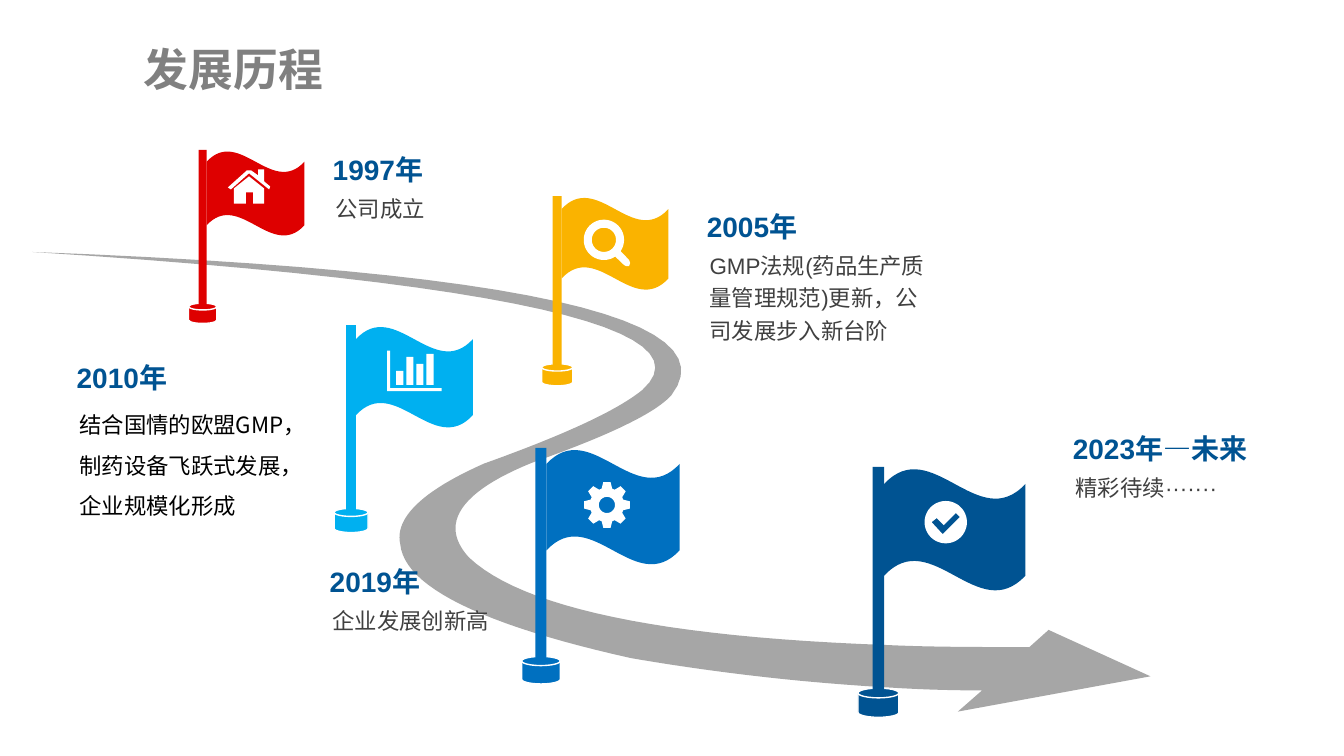
from math import cos, radians, sin

from pptx import Presentation
from pptx import util as u
from pptx.dml.color import RGBColor
from pptx.enum import shapes, text
from pptx.oxml import ns

COLOURS = {
    "red": "DE0000", "amber": "FAB300", "sky": "00B0F0", "blue": "0070C0",
    "navy": "005392", "road": "A6A6A6", "title": "808080", "body": "404040",
    "black": "000000", "white": "FFFFFF",
}
LATIN, CHINESE = "Arial", "Noto Sans CJK SC"

# Road outline, relative to its box: two numbers are a line, six a curve
ROAD = [
    (9.89, 3.92), (10.08, 3.75), (11.09, 4.21), (9.18, 4.56), (9.42, 4.35),
    (9.10, 4.35, 8.79, 4.34, 8.48, 4.32),
    (7.60, 4.27, 6.76, 4.17, 5.94, 4.03),
    (4.46, 3.70, 3.69, 3.32, 3.65, 2.90),
    (3.59, 2.64, 3.87, 2.37, 4.48, 2.10),
    (5.26, 1.82, 5.79, 1.58, 6.05, 1.37),
    (6.73, 0.76, 4.71, 0.30, 0, 0),
    (4.81, 0.18, 6.93, 0.65, 6.34, 1.42),
    (6.18, 1.60, 5.72, 1.82, 4.96, 2.09),
    (4.24, 2.38, 4.03, 2.70, 4.33, 3.03),
    (4.86, 3.53, 6.24, 3.82, 8.48, 3.90),
    (8.92, 3.92, 9.39, 3.92, 9.89, 3.92),
]


def rgb(name):
    return RGBColor.from_string(COLOURS[name])


# Geometry of the outlines
def flatten(segments, steps=24):
    points = [segments[0]]
    for segment in segments[1:]:
        if len(segment) == 2:
            points.append(segment)
            continue
        x0, y0 = points[-1]
        x1, y1, x2, y2, x3, y3 = segment
        for step in range(1, steps + 1):
            t = step / steps
            a, b, c, d = (1 - t) ** 3, 3 * t * (1 - t) ** 2, 3 * t * t * (1 - t), t ** 3
            points.append((a * x0 + b * x1 + c * x2 + d * x3,
                           a * y0 + b * y1 + c * y2 + d * y3))
    return points


def polar(radius, degrees, cx=0, cy=0):
    angle = radians(degrees)
    return cx + radius * cos(angle), cy + radius * sin(angle)


def arc(radius, start=0, end=360, cx=0, cy=0, steps=60):
    return [polar(radius, start + (end - start) * i / steps, cx, cy)
            for i in range(steps + 1)]


# Icons: contours around the icon's centre
def house_icon():
    roof = [(0.2, 0.03), (0, -0.13), (-0.18, 0.03), (-0.21, 0.01), (-0.02, -0.16),
            (0.02, -0.16), (0.09, -0.11), (0.09, -0.17), (0.15, -0.17),
            (0.15, -0.05), (0.21, 0)]
    walls = [(0.15, 0.17), (0.04, 0.17), (0.04, 0.06), (-0.03, 0.06), (-0.03, 0.17),
             (-0.15, 0.17), (-0.15, 0.02), (0, -0.1), (0.15, 0.02)]
    return [roof, walls]


def search_icon():
    centre = {"cx": -0.03, "cy": -0.04}
    handle = [(0.22, 0.16), (0.23, 0.19), (0.22, 0.22), (0.19, 0.22), (0.17, 0.21)]
    return [arc(0.2, 56, 394, **centre) + handle, arc(0.12, **centre)]


def chart_icon():
    axes = [(0.27, 0.2), (-0.27, 0.2), (-0.27, -0.2), (-0.24, -0.2),
            (-0.24, 0.17), (0.27, 0.17)]
    contours = [axes]
    for i, top in enumerate([0, -0.14, -0.07, -0.17]):
        left = -0.18 + 0.1 * i
        right = left + 0.07
        contours.append([(left, 0.14), (left, top), (right, top), (right, 0.14)])
    return contours


def gear_icon():
    teeth = [polar(radius, tooth * 45 + turn) for tooth in range(8)
             for radius, turn in ((0.17, -18), (0.23, -9), (0.23, 9), (0.17, 18))]
    return [teeth, arc(0.08)]


def check_icon():
    tick = [(0.14, -0.05), (0.1, -0.09), (-0.02, 0.03), (-0.09, -0.04),
            (-0.14, 0), (-0.03, 0.12)]
    return [arc(0.21), tick]


# Basic drawing
def paint(shape, fill, line=None):
    shape.shadow.inherit = False
    shape.fill.solid()
    shape.fill.fore_color.rgb = rgb(fill)
    if line:
        shape.line.color.rgb = rgb(line)
        shape.line.width = u.Pt(1)
    else:
        shape.line.fill.background()


def add_outline(parent, contours, left, top, fill):
    placed = [[(u.Inches(left + x), u.Inches(top + y)) for x, y in contour]
              for contour in contours]
    builder = parent.build_freeform(*placed[0][0], scale=1.0)
    for i, contour in enumerate(placed):
        if i:
            builder.move_to(*contour[0])
        builder.add_line_segments(contour[1:], close=True)
    paint(builder.convert_to_shape(), fill)


def add_text(parent, words, left, top, width, height, *, size, colour, font=LATIN,
             bold=False, spacing=None, inset=True):
    box = parent.add_textbox(*map(u.Inches, (left, top, width, height)))
    frame = box.text_frame
    frame.word_wrap = True
    frame.auto_size = text.MSO_AUTO_SIZE.SHAPE_TO_FIT_TEXT
    if not inset:
        frame.margin_left = frame.margin_right = 0
        frame.margin_top = frame.margin_bottom = 0
    para = frame.paragraphs[0]
    if spacing:
        para.line_spacing = spacing
    span = para.add_run()
    span.text = words
    span.font.size = u.Pt(size)
    span.font.bold = bold
    span.font.color.rgb = rgb(colour)
    span.font.name = font
    east_asian = span.font._element.makeelement(ns.qn("a:ea"), {"typeface": CHINESE})
    span.font._element.find(ns.qn("a:latin")).addnext(east_asian)


# Regions of the slide
def add_road(page, left, top):
    add_outline(page.shapes, [flatten(ROAD)], left, top, "road")


def add_flag(page, left, top, width, colour, icon, icon_x, icon_y):
    """All parts scale with the width of the cloth."""
    group = page.shapes.add_group_shape().shapes
    preset = shapes.MSO_SHAPE
    parts = [
        (preset.FLOWCHART_MAGNETIC_DISK, -0.186, 1.555, 0.29, 0.207, "white"),
        (preset.WAVE, 0, 0, 1, 0.866, None),
        (preset.RECTANGLE, -0.083, -0.012, 0.083, 1.6, None),
    ]
    for kind, x, y, w, h, line in parts:
        area = (left + x * width, top + y * width, w * width, h * width)
        paint(group.add_shape(kind, *map(u.Inches, area)), colour, line)
    add_outline(group, icon(), left + icon_x, top + icon_y, "white")


def add_milestone(page, left, top, year, story, year_width, width, height, **style):
    group = page.shapes.add_group_shape().shapes
    add_text(group, year, left, top, year_width, 0.34, size=20, colour="navy",
             bold=True, inset=False)
    look = {"size": 16, "colour": "body", "spacing": 1.2, **style}
    add_text(group, story, left - 0.07, top + 0.32, width, height, **look)


def build_history(page):
    add_text(page.shapes, "发展历程", 1.33, 0.1, 2.5, 0.91, size=32, colour="title",
             font=CHINESE, bold=True, spacing=1.5)
    add_road(page, 0.32, 2.5)
    for flag in [
        (8.77, 4.65, 1.4, "navy", check_icon, 0.61, 0.53),
        (5.42, 4.46, 1.32, "blue", gear_icon, 0.6, 0.55),
        (2.05, 1.5, 0.97, "red", house_icon, 0.42, 0.35),
        (5.57, 1.96, 1.06, "amber", search_icon, 0.45, 0.46),
        (3.53, 3.24, 1.16, "sky", chart_icon, 0.58, 0.44),
    ]:
        add_flag(page, *flag)
    add_milestone(page, 10.64, 4.28, "2023年—未来", "精彩待续·······", 1.9, 2.45, 0.42)
    add_milestone(page, 3.27, 5.6, "2019年", "企业发展创新高", 1.15, 1.87, 0.42)
    add_milestone(page, 0.76, 3.58, "2010年",
                  "结合国情的欧盟GMP，制药设备飞跃式发展，企业规模化形成",
                  1.51, 2.45, 1.31, colour="black", font=CHINESE, spacing=1.5)
    add_milestone(page, 7.01, 2.08, "2005年",
                  "GMP法规(药品生产质量管理规范)更新，公司发展步入新台阶",
                  1.51, 2.45, 1.07)
    add_milestone(page, 3.3, 1.51, "1997年", "公司成立", 1.51, 2.19, 0.42)


def main():
    deck = Presentation()
    deck.slide_width, deck.slide_height = u.Inches(13.33), u.Inches(7.5)
    build_history(deck.slides.add_slide(deck.slide_layouts[6]))
    deck.save("out.pptx")


if __name__ == "__main__":
    main()
